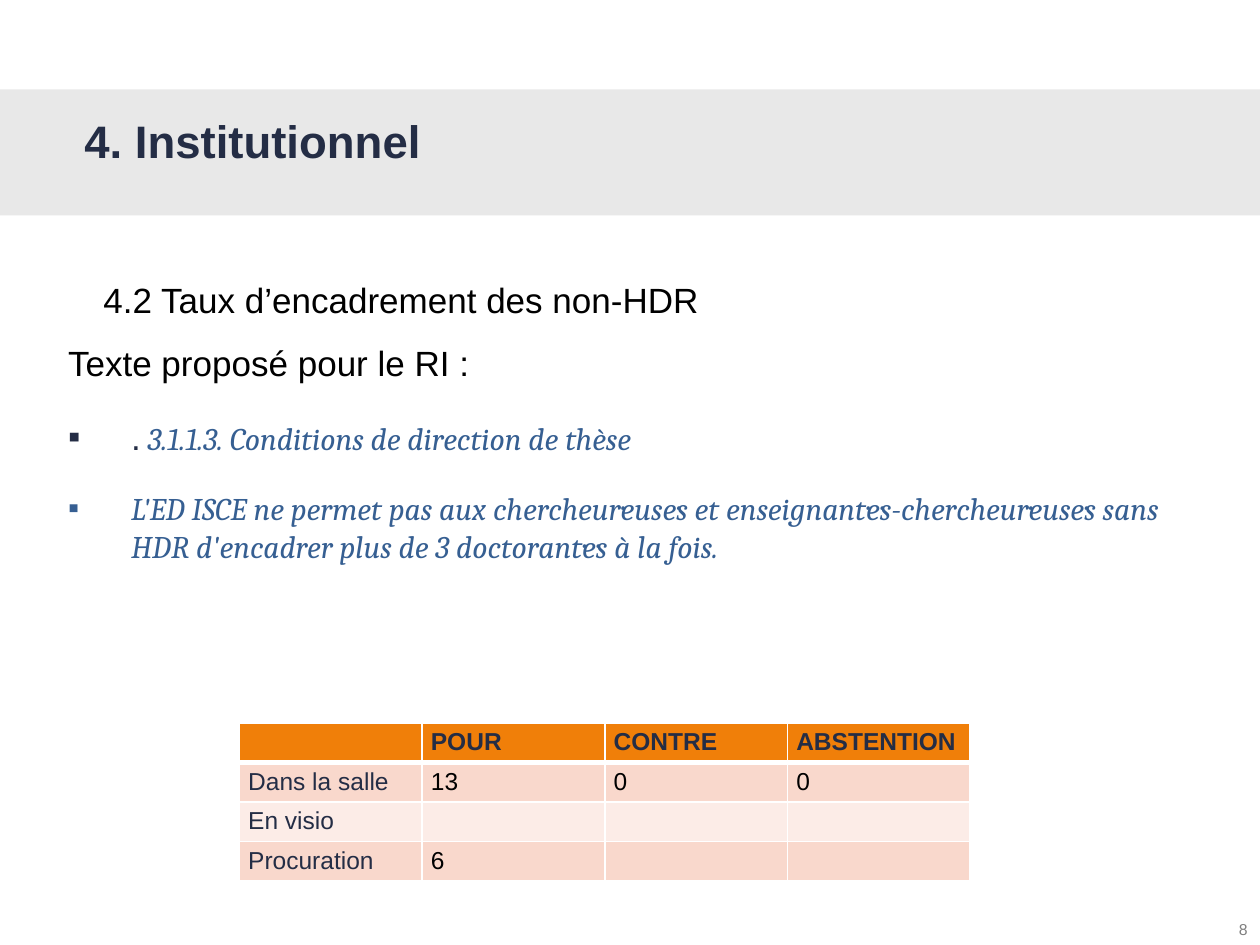
from lxml.etree import SubElement
from pptx import Presentation
from pptx.dml.color import RGBColor
from pptx.enum.shapes import MSO_SHAPE
from pptx.enum.text import MSO_ANCHOR, MSO_AUTO_SIZE, PP_ALIGN
from pptx.oxml.ns import qn
from pptx.util import Inches, Pt

NAVY, BLUE, BLACK, GREY, WHITE = "242D45", "365F92", "000000", "7F7F7F", "FFFFFF"
BAND_GREY, ORANGE, PINK, PALE_PINK = "D9D9D9", "F07F09", "F9D8CC", "FCECE7"

TITLE = "4. Institutionnel"
PAGE_NUMBER = "8"
PLAIN = dict(size=20, color=BLACK)
QUOTE = dict(size=18, color=BLUE, font="Cambria", italic=True)
BULLET = dict(left=0.5, hanging=0.5, bullet="▪", before=12, after=6)
# Each paragraph: its runs, then its layout
BODY = [
    ([("4.2 Taux d’encadrement des non-HDR", PLAIN)],
     dict(level=1, left=0.28, line=1.1)),
    ([("Texte proposé pour le RI :", PLAIN)], dict(before=12, after=6)),
    ([(".", dict(size=20, color=NAVY)),
      (" 3.1.1.3. Conditions de direction de thèse", QUOTE)], BULLET),
    ([("L'ED ISCE ne permet pas aux chercheur·euse·s et "
       "enseignant·e·s-chercheur·euse·s sans HDR d'encadrer plus de "
       "3 doctorant·e·s à la fois.", QUOTE)], BULLET),
]
VOTES = [
    ["", "POUR", "CONTRE", "ABSTENTION"],
    ["Dans la salle", "13", "0", "0"],
    ["En visio", "", "", ""],
    ["Procuration", "6", "", ""],
]
COLUMN_WIDTH, ROW_HEIGHT = 1.45, 0.3


def rgb(hex_color):
    return RGBColor.from_string(hex_color)


def box(*lengths):
    return [Inches(length) for length in lengths]


def place(shape, *lengths):
    shape.left, shape.top, shape.width, shape.height = box(*lengths)


def write(paragraph, text, size=14, color=BLACK, font="Arial", bold=False, italic=False):
    """Add one formatted run; an empty text only sets the height of its line."""
    if not text:
        SubElement(paragraph._p, qn("a:endParaRPr"), sz=str(size * 100))
        return
    run = paragraph.add_run()
    run.text = text
    run.font.size, run.font.name = Pt(size), font
    run.font.bold, run.font.italic = bold, italic
    run.font.color.rgb = rgb(color)


def lay_out(paragraph, level=0, left=0, hanging=0, bullet=None, before=0, after=0, line=1.0):
    paragraph.level = level
    paragraph.alignment = PP_ALIGN.LEFT
    paragraph.space_before, paragraph.space_after = Pt(before), Pt(after)
    paragraph.line_spacing = line
    properties = paragraph._p.get_or_add_pPr()
    properties.set("marL", str(Inches(left)))
    properties.set("indent", str(-Inches(hanging)))
    if bullet:
        SubElement(properties, qn("a:buFont"), typeface="Arial")
        SubElement(properties, qn("a:buChar"), char=bullet)
    else:
        SubElement(properties, qn("a:buNone"))


def set_borders(cell, **widths):
    """Draw white borders, given in points by side: L, R, T, B."""
    properties = cell._tc.get_or_add_tcPr()
    for position, (side, width) in enumerate(widths.items()):
        border = SubElement(properties, qn(f"a:ln{side}"), w=str(Pt(width)))
        fill = SubElement(border, qn("a:solidFill"))
        SubElement(fill, qn("a:srgbClr"), val=WHITE)
        properties.insert(position, border)


def add_band(slide):
    band = slide.shapes.add_shape(MSO_SHAPE.RECTANGLE, *box(-0.01, 0.71, 10.01, 1))
    band.shadow.inherit = False
    band.line.fill.background()
    band.fill.solid()
    band.fill.fore_color.rgb = rgb(BAND_GREY)
    color = band._element.spPr.find(qn("a:solidFill"))[0]
    SubElement(color, qn("a:alpha"), val="59000")
    slide.shapes._spTree.insert(2, band._element)  # behind the title


def add_page_number(slide):
    frame = slide.shapes.add_textbox(*box(9.64, 7.25, 0.36, 0.25)).text_frame
    frame.word_wrap = False
    frame.auto_size = MSO_AUTO_SIZE.SHAPE_TO_FIT_TEXT
    frame.paragraphs[0].alignment = PP_ALIGN.RIGHT
    write(frame.paragraphs[0], PAGE_NUMBER, size=9, color=GREY)


def fill_placeholders(slide):
    title, body = slide.shapes.title, slide.placeholders[1]
    place(title, 0.57, 0.85, 9.12, 0.78)
    place(body, 0.44, 2.13, 9.12, 4.68)
    for holder in (title, body):
        holder.text_frame.vertical_anchor = MSO_ANCHOR.TOP
        holder.text_frame.auto_size = MSO_AUTO_SIZE.NONE
    heading = title.text_frame.paragraphs[0]
    heading.alignment = PP_ALIGN.LEFT
    write(heading, TITLE, size=26, color=NAVY, bold=True)
    frame = body.text_frame
    for index, (runs, layout) in enumerate(BODY):
        paragraph = frame.add_paragraph() if index else frame.paragraphs[0]
        lay_out(paragraph, **layout)
        for text, style in runs:
            write(paragraph, text, **style)


def add_votes(slide):
    rows, columns = len(VOTES), len(VOTES[0])
    table = slide.shapes.add_table(
        rows, columns,
        *box(1.9, 5.74, columns * COLUMN_WIDTH, rows * ROW_HEIGHT)).table
    for r, row in enumerate(VOTES):
        header = r == 0
        for c, text in enumerate(row):
            cell = table.cell(r, c)
            cell.margin_left = cell.margin_right = Inches(0.07)
            cell.margin_top = cell.margin_bottom = Inches(0.04)
            cell.fill.solid()
            cell.fill.fore_color.rgb = rgb(
                ORANGE if header else PINK if r % 2 else PALE_PINK)
            set_borders(cell, L=1, R=1, T=3 if r == 1 else 1, B=3 if header else 1)
            write(cell.text_frame.paragraphs[0], text, bold=header,
                  color=NAVY if header or c == 0 else BLACK)


def main():
    deck = Presentation()
    deck.slide_width, deck.slide_height = box(10, 7.5)
    slide = deck.slides.add_slide(deck.slide_layouts[1])
    add_band(slide)
    add_page_number(slide)
    fill_placeholders(slide)
    add_votes(slide)
    deck.save("out.pptx")


if __name__ == "__main__":
    main()
